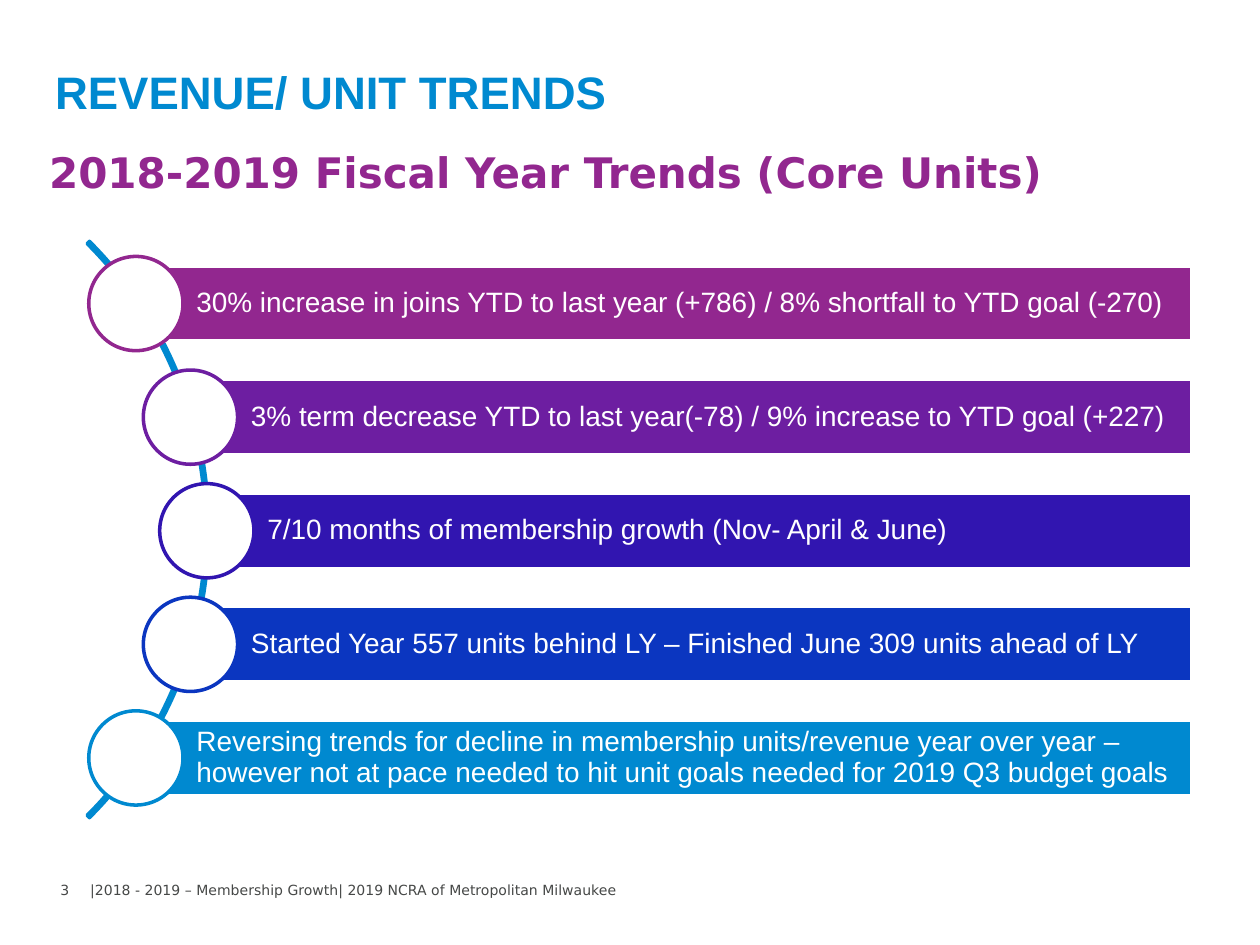
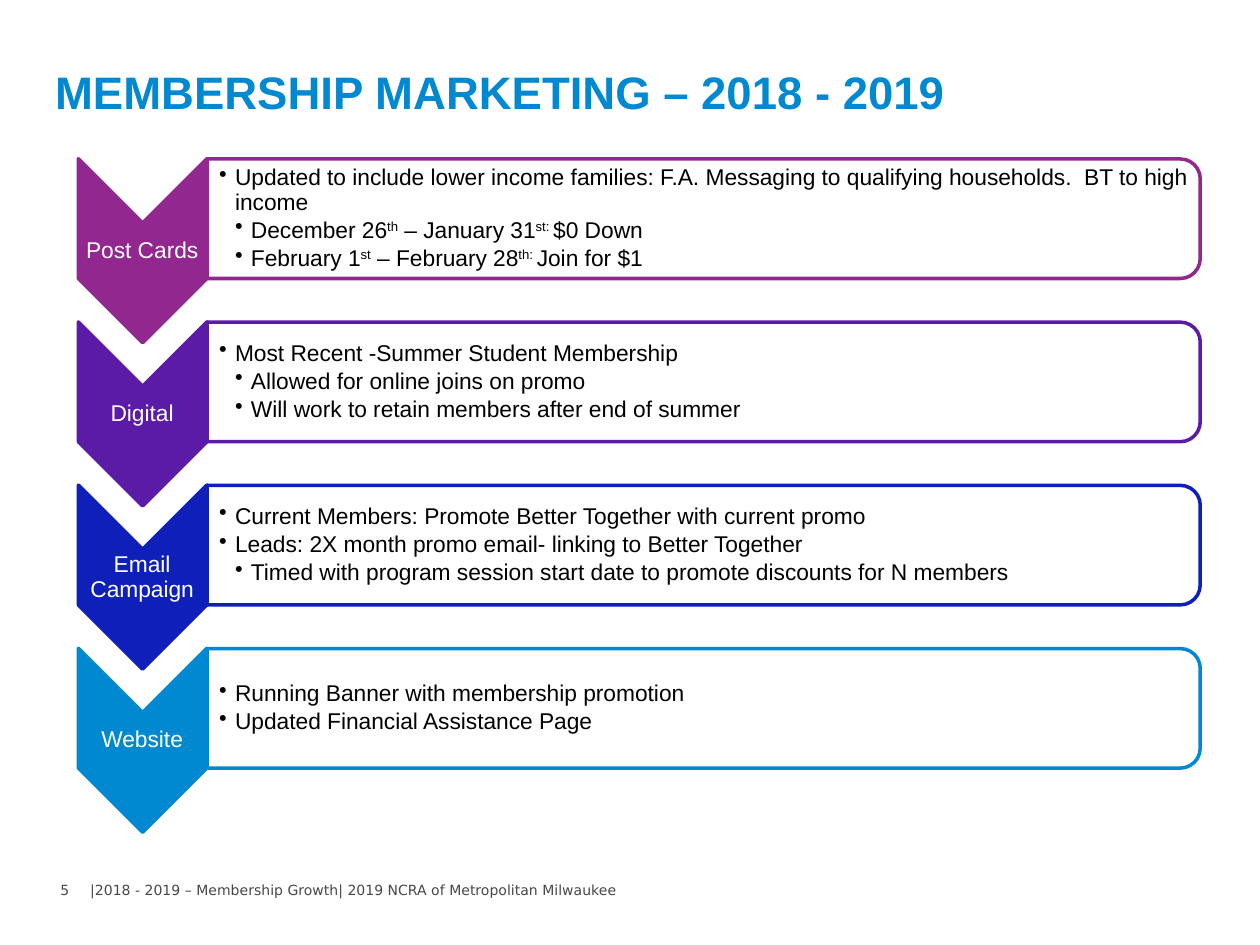
"""Build two membership slides: unit trends and marketing channels."""
from lxml import etree
from pptx import Presentation
from pptx.dml.color import RGBColor
from pptx.enum.shapes import MSO_SHAPE as SHAPE
from pptx.enum.text import MSO_ANCHOR as ANCHOR, MSO_AUTO_SIZE as AUTO, PP_ALIGN as ALIGN
from pptx.oxml.ns import qn
from pptx.util import Cm, Pt

BLUE, PURPLE, WHITE, BLACK, GREY = "0089D0", "92278F", "FFFFFF", "000000", "464847"
SANS, WIDE = "Arial", "DejaVu Sans"
FOOTER = "|2018 - 2019 – Membership Growth| 2019 NCRA of Metropolitan Milwaukee"
rgb = RGBColor.from_string


def paint(sp, fill, line):
    """Set fill and outline, without a shadow."""
    sp.shadow.inherit = False
    if fill:
        sp.fill.solid()
        sp.fill.fore_color.rgb = rgb(fill)
    else:
        sp.fill.background()
    sp.line.color.rgb = rgb(line)
    sp.line.width = Pt(2)


def write(sp, text, size, color, font=SANS, bold=False, insets=(0.25, 0.13, 0.25, 0.13),
          anchor=ANCHOR.TOP, align=ALIGN.LEFT, spacing=1.0):
    """Fill a shape with lines of text; parts between ^ marks are superscript."""
    tf = sp.text_frame
    tf.word_wrap, tf.auto_size, tf.vertical_anchor = True, AUTO.NONE, anchor
    tf.margin_left, tf.margin_top, tf.margin_right, tf.margin_bottom = map(Cm, insets)
    tf.text = text.replace("^", "")
    for p, line in zip(tf.paragraphs, text.split("\n")):
        p.text = ""
        p.alignment, p.line_spacing = align, spacing
        for i, part in enumerate(line.split("^")):
            r = p.add_run()
            r.text = part
            r.font.size, r.font.name, r.font.bold = Pt(size), font, bold
            r.font.color.rgb = rgb(color)
            if i % 2:
                r.font._element.set("baseline", "30000")


prs = Presentation()
prs.slide_width, prs.slide_height = Cm(25.4), Cm(19.05)

slides = []
for title, number in [("REVENUE/ UNIT TRENDS", "3"), ("MEMBERSHIP MARKETING – 2018 - 2019", "5")]:
    s = prs.slides.add_slide(prs.slide_layouts[5])
    sp = s.shapes.title
    sp.left, sp.top, sp.width, sp.height = Cm(0.86), Cm(1.07), Cm(23.27), Cm(2.34)
    write(sp, title, 26, BLUE, bold=True, insets=(0.25, 0.23, 0.25, 0.13))
    for text, left, width in [(FOOTER, 1.57, 22.56), (number, 0.97, 1.14)]:
        sp = s.shapes.add_textbox(Cm(left), Cm(17.65), Cm(width), Cm(0.7))
        write(sp, text, 8, GREY, WIDE)
    slides.append(s)
trends, marketing = slides

sp = trends.shapes.add_textbox(Cm(0.74), Cm(2.72), Cm(21.97), Cm(3.33))
write(sp, "2018-2019 Fiscal Year Trends (Core Units)", 24, PURPLE, WIDE, True, (0.25, 0.23, 0.25, 0.13))

arc = trends.shapes.add_shape(SHAPE.BLOCK_ARC, Cm(-12.22), Cm(2.46), Cm(16.43), Cm(16.43))
arc.adjustments[0], arc.adjustments[1], arc.adjustments[2] = 189, 27, 0.004
paint(arc, None, BLUE)

BAR_TOP, BAR_RIGHT, BAR_H, BAR_STEP, DOT = 5.36, 24.02, 1.52, 2.29, 1.9
bars = [
    (2.74, PURPLE, "30% increase in joins YTD to last year (+786) / 8% shortfall to YTD goal (-270)"),
    (3.84, "6D1EA1", "3% term decrease YTD to last year(-78) / 9% increase to YTD goal (+227)"),
    (4.17, "3115B0", "7/10 months of membership growth (Nov- April & June)"),
    (3.84, "0B36C0", "Started Year 557 units behind LY – Finished June 309 units ahead of LY"),
    (2.74, BLUE, "Reversing trends for decline in membership units/revenue year over year – "
                 "however not at pace needed to hit unit goals needed for 2019 Q3 budget goals"),
]
for i, (left, color, text) in enumerate(bars):
    top = BAR_TOP + i * BAR_STEP
    bar = trends.shapes.add_shape(SHAPE.RECTANGLE, Cm(left), Cm(top), Cm(BAR_RIGHT - left), Cm(BAR_H))
    paint(bar, color, WHITE)
    write(bar, text, 16, WHITE, insets=(1.22, 0.1, 0.1, 0.1), anchor=ANCHOR.MIDDLE, spacing=0.9)
    dot = trends.shapes.add_shape(
        SHAPE.OVAL, Cm(left - DOT / 2), Cm(top + (BAR_H - DOT) / 2), Cm(DOT), Cm(DOT))
    paint(dot, WHITE, color)

CHANNEL_STEP, INDENT = 3.29, 0.32
channels = [
    ("Post Cards", PURPLE, [
        (0, "Updated to include lower income families: F.A. Messaging to qualifying households.  "
            "BT to high income"),
        (1, "December 26^th^ – January 31^st: ^$0 Down"),
        (1, "February 1^st^ – February 28^th: ^Join for $1")]),
    ("Digital", "5C1BA6", [
        (0, "Most Recent -Summer Student Membership"),
        (1, "Allowed for online joins on promo"),
        (1, "Will work to retain members after end of summer")]),
    ("Email Campaign", "0E1FBA", [
        (0, "Current Members: Promote Better Together with current promo"),
        (0, "Leads: 2X month promo email- linking to Better Together"),
        (1, "Timed with program session start date to promote discounts for N members")]),
    ("Website", BLUE, [
        (0, "Running Banner with membership promotion"),
        (0, "Updated Financial Assistance Page")]),
]
for i, (name, color, items) in enumerate(channels):
    shift = i * CHANNEL_STEP
    chevron = marketing.shapes.add_shape(SHAPE.CHEVRON, Cm(1.02), Cm(3.76 + shift), Cm(3.71), Cm(2.59))
    chevron.rotation = 90
    paint(chevron, color, color)
    label = marketing.shapes.add_textbox(Cm(1.57), Cm(4.5 + shift), Cm(2.59), Cm(1.12))
    write(label, name, 13, WHITE, insets=(0.03,) * 4, anchor=ANCHOR.MIDDLE,
          align=ALIGN.CENTER, spacing=0.9)

    panel = marketing.shapes.add_shape(
        SHAPE.ROUND_2_SAME_RECTANGLE, Cm(12.98), Cm(-5.6 + shift), Cm(2.41), Cm(20.02))
    panel.rotation = 90
    paint(panel, WHITE, color)
    fill = panel._element.spPr.find(qn("a:solidFill"))
    etree.SubElement(fill[0], qn("a:alpha"), val="90000")

    notes = marketing.shapes.add_textbox(Cm(4.17), Cm(3.33 + shift), Cm(19.89), Cm(2.16))
    write(notes, "\n".join(text for level, text in items), 13, BLACK,
          insets=(0.25, 0.03, 0.03, 0.03), anchor=ANCHOR.MIDDLE, spacing=0.9)
    for p, (level, text) in zip(notes.text_frame.paragraphs, items):
        p.level, p.space_after = level, Pt(2)
        pPr = p._p.get_or_add_pPr()
        pPr.set("marL", str(Cm(INDENT * (level + 1))))
        pPr.set("indent", str(Cm(-INDENT)))
        etree.SubElement(pPr, qn("a:buChar"), char="•")

prs.save("out.pptx")
